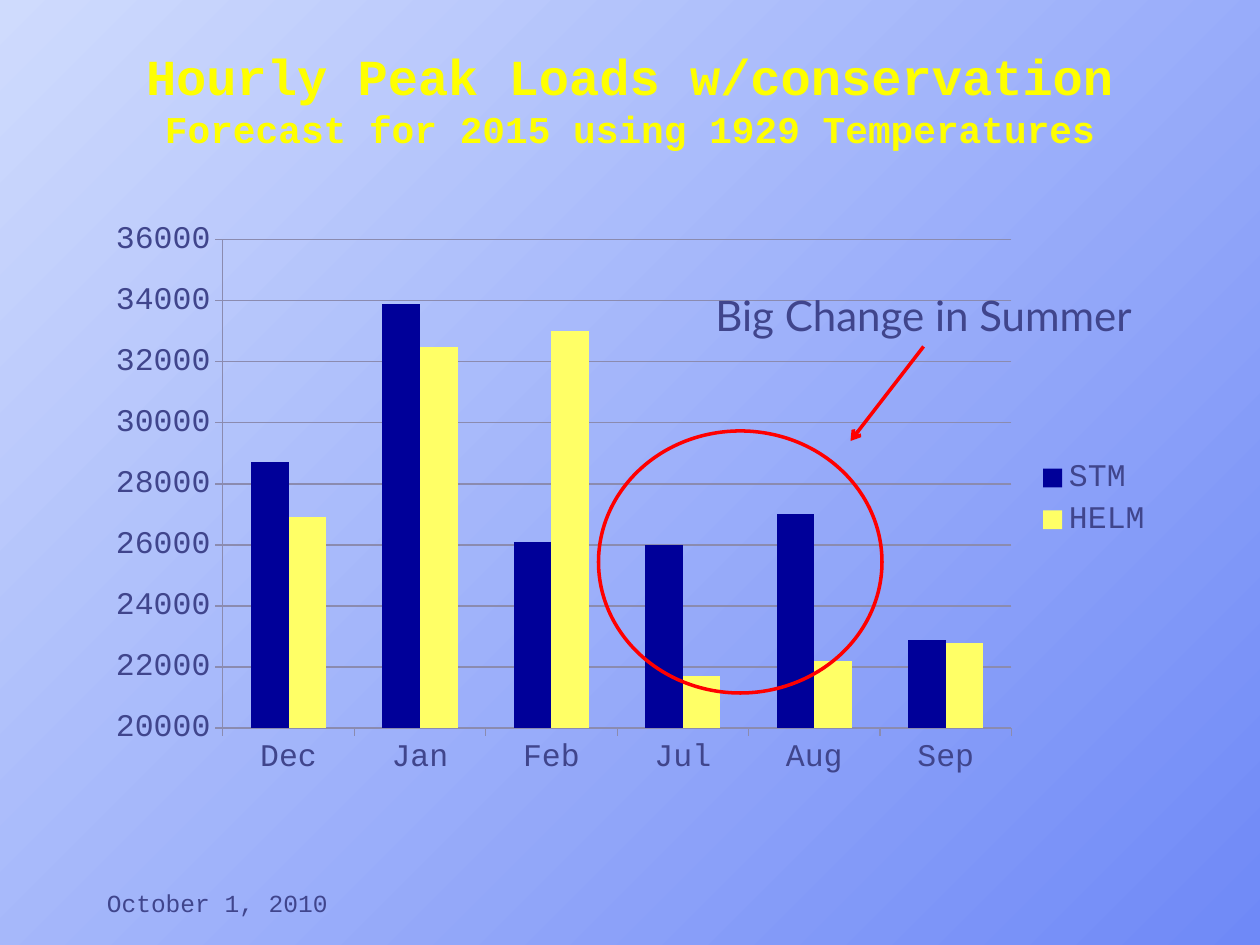
from lxml import etree
from pptx import Presentation
from pptx.chart import data as cd
from pptx.dml.color import RGBColor
from pptx.enum import chart as ch, shapes, text
from pptx.oxml.ns import qn
from pptx.util import Inches, Pt

INK, TITLE, RED, GRID = "40458C", "FFFF00", "FF0000", "8B8BAF"
MONO = "Courier New"
MONTHS = ["Dec", "Jan", "Feb", "Jul", "Aug", "Sep"]
LOADS = {
    "STM": ("000099", [28700, 33900, 26100, 26000, 27000, 22900]),
    "HELM": ("FFFF66", [26900, 32500, 33000, 21700, 22200, 22800]),
}


def rgb(value):
    return RGBColor.from_string(value)


def set_font(font, color, **values):
    for name, value in values.items():
        setattr(font, name, value)
    font.color.rgb = rgb(color)


def set_line(line, color, width):
    line.color.rgb = rgb(color)
    line.width = Pt(width)


def add_background(s):
    fill = s.background.fill
    fill.gradient()
    fill.gradient_angle = 315
    for stop, color in zip(fill.gradient_stops, ("CFDBFD", "6F89F7")):
        stop.color.rgb = rgb(color)


def add_text(s, box, lines, color, name, align=text.PP_ALIGN.LEFT,
             anchor=text.MSO_ANCHOR.TOP, bold=False):
    """Place (wording, size) lines in one paragraph, split by line breaks."""
    tf = s.shapes.add_textbox(*map(Inches, box)).text_frame
    tf.word_wrap = True
    tf.vertical_anchor = anchor
    p = tf.paragraphs[0]
    p.alignment = align
    for i, (wording, size) in enumerate(lines):
        if i:
            p.add_line_break()
        r = p.add_run()
        r.text = wording
        set_font(r.font, color, name=name, size=Pt(size), bold=bold)


def add_load_chart(s, box):
    data = cd.CategoryChartData(number_format="General")
    data.categories = MONTHS
    for name, (_, values) in LOADS.items():
        data.add_series(name, values)
    chart = s.shapes.add_chart(ch.XL_CHART_TYPE.COLUMN_CLUSTERED,
                               *map(Inches, box), data).chart
    set_font(chart.font, INK, name=MONO, size=Pt(18))
    chart.has_title = False
    chart.has_legend = True
    chart.legend.position = ch.XL_LEGEND_POSITION.RIGHT
    chart.legend.include_in_layout = False

    plot = chart.plots[0]
    plot.vary_by_categories = False
    plot.gap_width, plot.overlap = 150, 0
    for series, (color, _) in zip(plot.series, LOADS.values()):
        series.format.fill.solid()
        series.format.fill.fore_color.rgb = rgb(color)
        series.invert_if_negative = False

    scale = chart.value_axis
    scale.minimum_scale, scale.maximum_scale, scale.major_unit = 20000, 36000, 2000
    scale.has_major_gridlines = True
    set_line(scale.major_gridlines.format.line, GRID, 0.75)
    for axis in (scale, chart.category_axis):
        axis.major_tick_mark = ch.XL_TICK_MARK.OUTSIDE
        set_line(axis.format.line, GRID, 0.75)


def add_callout(s, left, top):
    """Label, arrow and ring that point out the summer months."""
    ring = s.shapes.add_shape(shapes.MSO_SHAPE.OVAL, Inches(left), Inches(top + 1.17),
                              Inches(2.25), Inches(2.08))
    ring.shadow.inherit = False
    ring.fill.background()
    set_line(ring.line, RED, 2)

    ends = (left + 2.58, top + 0.5, left + 2, top + 1.25)
    arrow = s.shapes.add_connector(shapes.MSO_CONNECTOR.STRAIGHT, *map(Inches, ends))
    set_line(arrow.line, RED, 2)
    etree.SubElement(arrow.line._get_or_add_ln(), qn("a:tailEnd"), type="arrow")
    etree.SubElement(arrow._element.spPr, qn("a:effectLst"))

    add_text(s, (left + 0.83, top, 3.83, 0.5), [("Big Change in Summer", 24)], INK, "Lato")


def main():
    prs = Presentation()
    prs.slide_width, prs.slide_height = Inches(10), Inches(7.5)
    s = prs.slides.add_slide(prs.slide_layouts[6])
    add_background(s)
    add_load_chart(s, (0.75, 1.67, 8.5, 4.58))
    add_text(s, (0.75, 6.83, 2.08, 0.5), [("October 1, 2010", 14)], INK, MONO,
             anchor=text.MSO_ANCHOR.BOTTOM)
    add_text(s, (0.75, 0.33, 8.5, 0.92),
             [("Hourly Peak Loads w/conservation", 28.8),
              ("Forecast for 2015 using 1929 Temperatures", 21.6)],
             TITLE, MONO, text.PP_ALIGN.CENTER, text.MSO_ANCHOR.BOTTOM, True)
    add_callout(s, 4.75, 2.25)
    prs.save("out.pptx")


if __name__ == "__main__":
    main()
